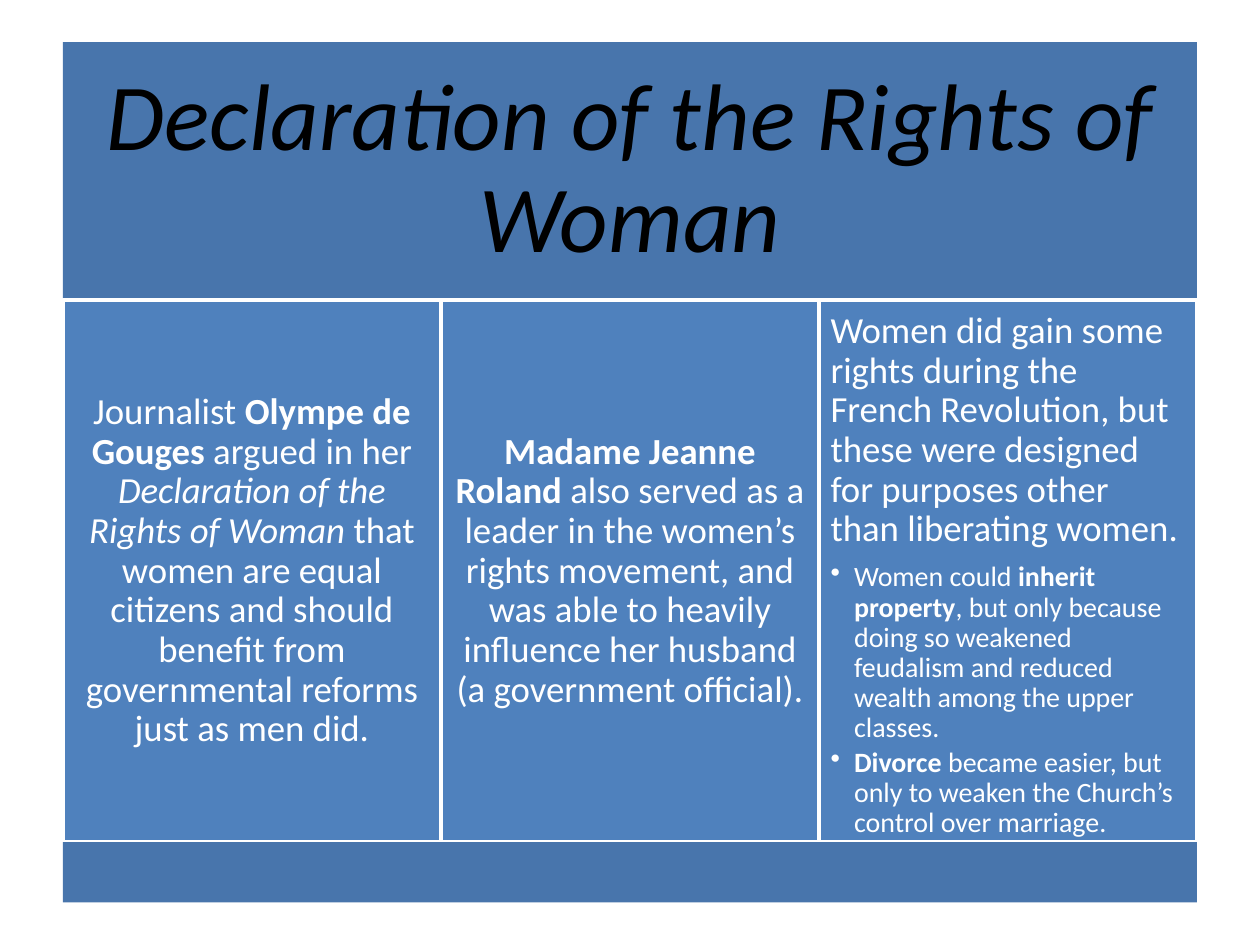
from dataclasses import dataclass

from lxml import etree
from pptx import Presentation
from pptx.dml.color import RGBColor
from pptx.enum.shapes import MSO_SHAPE
from pptx.enum.text import MSO_ANCHOR, PP_ALIGN
from pptx.oxml.ns import qn
from pptx.util import Pt

RECTANGLE = MSO_SHAPE.RECTANGLE
TOP, MIDDLE = MSO_ANCHOR.TOP, MSO_ANCHOR.MIDDLE
LEFT, CENTER = PP_ALIGN.LEFT, PP_ALIGN.CENTER

BAND_BLUE = RGBColor(0x48, 0x75, 0xAC)
COLUMN_BLUE = RGBColor(0x4F, 0x81, 0xBD)
WHITE = RGBColor(0xFF, 0xFF, 0xFF)
BLACK = RGBColor(0x00, 0x00, 0x00)

FONT = "Calibri"
MARGIN, WIDTH = 36, 648
HEADER_TOP, HEADER_HEIGHT = 24, 147.5
COLUMN_TOP, COLUMN_HEIGHT = HEADER_TOP + HEADER_HEIGHT, 309.75
FOOTER_TOP, FOOTER_HEIGHT = COLUMN_TOP + COLUMN_HEIGHT, 34.5
BULLET_INDENT = 13.5


@dataclass
class Run:
    text: str
    bold: bool = False
    italic: bool = False


@dataclass
class Paragraph:
    runs: list[Run]
    size: float = 21
    color: RGBColor = WHITE
    align: PP_ALIGN = CENTER
    space_after: float = 0
    bullet: bool = False


@dataclass
class Panel:
    paragraphs: list[Paragraph]
    anchor: MSO_ANCHOR = MIDDLE
    inset: float = 6.6


HEADER = Panel(
    [Paragraph([Run("Declaration of the Rights of Woman", italic=True)], 54, BLACK)],
    inset=16.5,
)
FOOTER = Panel([])

COLUMNS = [
    Panel([Paragraph([
        Run("Journalist "),
        Run("Olympe de Gouges", bold=True),
        Run(" argued in her "),
        Run("Declaration of the Rights of Woman", italic=True),
        Run(" that women are equal citizens and should benefit from "
            "governmental reforms just as men did."),
    ])]),
    Panel([Paragraph([
        Run("Madame Jeanne Roland", bold=True),
        Run(" also served as a leader in the women’s rights movement, and was "
            "able to heavily influence her husband (a government official)."),
    ])]),
    Panel([
        Paragraph([
            Run("Women did gain some rights during the French Revolution, but "
                "these were designed for purposes other than liberating women."),
        ], align=LEFT, space_after=7.35),
        Paragraph([
            Run("Women could "),
            Run("inherit property", bold=True),
            Run(", but only because doing so weakened feudalism and reduced "
                "wealth among the upper classes."),
        ], 16, align=LEFT, space_after=2.4, bullet=True),
        Paragraph([
            Run("Divorce", bold=True),
            Run(" became easier, but only to weaken the Church’s control over "
                "marriage."),
        ], 16, align=LEFT, space_after=2.4, bullet=True),
    ], anchor=TOP),
]


def set_attributes(target, values: dict) -> None:
    for name, value in values.items():
        setattr(target, name, value)


def add_bullet(paragraph) -> None:
    """Give the paragraph a round bullet with a hanging indent."""
    properties = paragraph._p.get_or_add_pPr()
    properties.set("marL", str(Pt(BULLET_INDENT)))
    properties.set("indent", str(-Pt(BULLET_INDENT)))
    etree.SubElement(properties, qn("a:buChar")).set("char", "•")


def write_paragraph(paragraph, content: Paragraph) -> None:
    set_attributes(paragraph, {
        "alignment": content.align,
        "line_spacing": 0.9,
        "space_after": Pt(content.space_after),
        "level": int(content.bullet),
    })
    if content.bullet:
        add_bullet(paragraph)
    for part in content.runs:
        run = paragraph.add_run()
        run.text = part.text
        set_attributes(run.font, {
            "name": FONT,
            "size": Pt(content.size),
            "bold": part.bold,
            "italic": part.italic,
        })
        run.font.color.rgb = content.color


def add_panel(slide, panel: Panel, left: float, top: float, width: float,
              height: float, fill: RGBColor, outlined: bool = False) -> None:
    box = slide.shapes.add_shape(RECTANGLE, Pt(left), Pt(top), Pt(width), Pt(height))
    box.shadow.inherit = False
    box.fill.solid()
    box.fill.fore_color.rgb = fill
    if outlined:
        box.line.color.rgb = WHITE
        box.line.width = Pt(2)
    else:
        box.line.fill.background()

    frame = box.text_frame
    inset = Pt(panel.inset)
    set_attributes(frame, {
        "word_wrap": True,
        "vertical_anchor": panel.anchor,
        "margin_left": inset,
        "margin_right": inset,
        "margin_top": inset,
        "margin_bottom": inset,
    })
    for index, content in enumerate(panel.paragraphs):
        paragraph = frame.add_paragraph() if index else frame.paragraphs[0]
        write_paragraph(paragraph, content)


def main() -> None:
    deck = Presentation()
    set_attributes(deck, {"slide_width": Pt(720), "slide_height": Pt(540)})
    slide = deck.slides.add_slide(deck.slide_layouts[6])

    add_panel(slide, HEADER, MARGIN, HEADER_TOP, WIDTH, HEADER_HEIGHT, BAND_BLUE)
    column_width = WIDTH / len(COLUMNS)
    for index, column in enumerate(COLUMNS):
        add_panel(slide, column, MARGIN + index * column_width, COLUMN_TOP,
                  column_width, COLUMN_HEIGHT, COLUMN_BLUE, outlined=True)
    add_panel(slide, FOOTER, MARGIN, FOOTER_TOP, WIDTH, FOOTER_HEIGHT, BAND_BLUE)

    deck.save("out.pptx")


if __name__ == "__main__":
    main()
